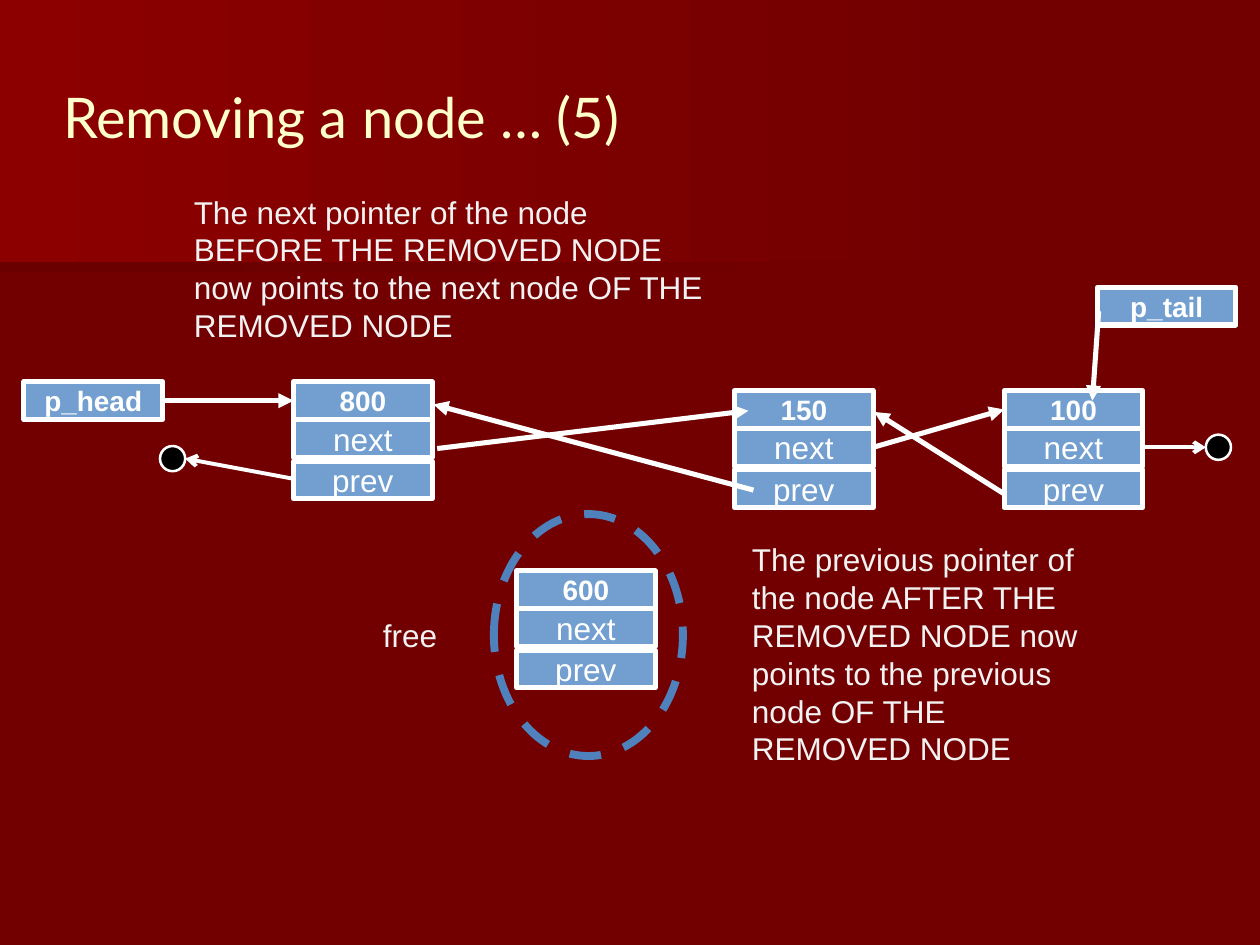
from dataclasses import dataclass

from lxml import etree
from pptx import Presentation
from pptx.dml.color import RGBColor
from pptx.enum.dml import MSO_LINE
from pptx.enum.shapes import MSO_CONNECTOR, MSO_SHAPE
from pptx.enum.text import MSO_ANCHOR, MSO_AUTO_SIZE, PP_ALIGN
from pptx.oxml.ns import qn
from pptx.util import Emu, Pt

RECTANGLE, OVAL = MSO_SHAPE.RECTANGLE, MSO_SHAPE.OVAL
STRAIGHT, DASH = MSO_CONNECTOR.STRAIGHT, MSO_LINE.DASH
MIDDLE, LEFT, CENTER = MSO_ANCHOR.MIDDLE, PP_ALIGN.LEFT, PP_ALIGN.CENTER
FIT_SHAPE = MSO_AUTO_SIZE.SHAPE_TO_FIT_TEXT

EMU_PER_PX = 9144
CELL_WIDTH, CELL_HEIGHT = 110, 30
ROW_OFFSETS = {"next": 30, "prev": 63}
DOT_SIZE = 20


@dataclass(frozen=True)
class Theme:
    """Colours, fonts and sizes of the slide."""

    background: str = "720000"
    band_low: str = "6B0000"
    band_high: str = "8C0000"
    title: str = "FFFFCC"
    note: str = "F2F2F2"
    cell: str = "729FCF"
    line: str = "FFFFFF"
    dot: str = "000000"
    ring: str = "4F81BD"
    title_font: str = "Lato"
    body_font: str = "Arial"
    title_size: float = 32
    body_size: float = 18
    key_size: float = 16
    line_width: float = 2.89
    null_width: float = 2.25
    dot_width: float = 1.45
    ring_width: float = 4.5


THEME = Theme()


def px(*lengths):
    """Turn px lengths into EMU."""
    return [Emu(length * EMU_PER_PX) for length in lengths]


def apply(target, values):
    """Set each attribute named in values."""
    for name, value in values.items():
        setattr(target, name, value)


def write(frame, text, color, font, frame_format, align=LEFT):
    """Write one formatted paragraph into a text frame."""
    apply(frame, frame_format)
    para = frame.paragraphs[0]
    para.alignment = align
    span = para.add_run()
    span.text = text
    apply(span.font, font)
    span.font.color.rgb = RGBColor.from_string(color)


def add_shape(page, kind, box, fill=None, line=None, width=0):
    """Add a flat shape with an optional fill and line."""
    shape = page.shapes.add_shape(kind, *px(*box))
    shape.shadow.inherit = False
    if fill:
        shape.fill.solid()
        shape.fill.fore_color.rgb = RGBColor.from_string(fill)
    else:
        shape.fill.background()
    if line:
        shape.line.color.rgb = RGBColor.from_string(line)
        shape.line.width = Pt(width)
    else:
        shape.line.fill.background()
    return shape


def add_band(page, box, color):
    """Add a band that fades into the background."""
    fill = add_shape(page, RECTANGLE, box).fill
    fill.gradient()
    fill.gradient_angle = 0
    for stop, position, shade in zip(fill.gradient_stops, (0, 1), (color, THEME.background)):
        stop.position = position
        stop.color.rgb = RGBColor.from_string(shade)


def add_title(page, box, text):
    """Place the title above the bands."""
    title = page.shapes.title
    page.shapes._spTree.append(title._element)
    apply(title, dict(zip(("left", "top", "width", "height"), px(*box))))
    margins = dict.fromkeys(("margin_left", "margin_top", "margin_right", "margin_bottom"), 0)
    font = {"name": THEME.title_font, "size": Pt(THEME.title_size)}
    write(title.text_frame, text, THEME.title, font, {**margins, "vertical_anchor": MIDDLE})


def add_cell(page, left, top, text, is_key=False):
    """Add one labelled memory cell."""
    box = (left, top, CELL_WIDTH, CELL_HEIGHT)
    cell = add_shape(page, RECTANGLE, box, THEME.cell, THEME.line, THEME.line_width)
    side, edge = px(12, 7)
    frame_format = {"margin_left": side, "margin_right": side, "margin_top": edge,
                    "margin_bottom": edge, "word_wrap": False, "vertical_anchor": MIDDLE}
    size = THEME.key_size if is_key else THEME.body_size
    font = {"name": THEME.body_font, "size": Pt(size), "bold": is_key}
    write(cell.text_frame, text, THEME.line, font, frame_format, CENTER)


def add_node(page, left, top, key):
    """Add a list node: its key above its two pointers."""
    add_cell(page, left, top, key, is_key=True)
    for label, offset in ROW_OFFSETS.items():
        add_cell(page, left, top + offset, label)


def add_arrow(page, start, end, head="triangle", width=THEME.line_width):
    """Add a straight arrow from start to end."""
    arrow = page.shapes.add_connector(STRAIGHT, *px(*start, *end))
    arrow.line.color.rgb = RGBColor.from_string(THEME.line)
    arrow.line.width = Pt(width)
    etree.SubElement(arrow.line._get_or_add_ln(), qn("a:tailEnd"), type=head)
    etree.SubElement(arrow._element.spPr, qn("a:effectLst"))


def add_null(page, left, top, start, end):
    """Add a null dot and the pointer that ends there."""
    add_shape(page, OVAL, (left, top, DOT_SIZE, DOT_SIZE), THEME.dot, THEME.line, THEME.dot_width)
    add_arrow(page, start, end, "arrow", THEME.null_width)


def add_note(page, box, text):
    """Add a wrapped text note."""
    frame = page.shapes.add_textbox(*px(*box)).text_frame
    font = {"name": THEME.body_font, "size": Pt(THEME.body_size)}
    write(frame, text, THEME.note, font, {"word_wrap": True, "auto_size": FIT_SHAPE})


def add_list(page):
    """Draw the linked list, its end pointers and the freed node."""
    ring = add_shape(page, OVAL, (392, 408, 150, 192), None, THEME.ring, THEME.ring_width)
    ring.line.dash_style = DASH
    for left, top, key in ((233, 303, "800"), (583, 310, "150"), (797, 310, "100"), (410, 453, "600")):
        add_node(page, left, top, key)
    for left, top, name in ((19, 303, "p_head"), (871, 228, "p_tail")):
        add_cell(page, left, top, name, is_key=True)
    add_null(page, 957, 345, (907, 355), (957, 355))
    add_null(page, 127, 354, (233, 380), (147, 364))
    for start, end in (
        ((129, 318), (233, 318)),
        ((693, 355), (797, 325)),
        ((797, 392), (694, 327)),
        ((347, 356), (594, 326)),
        ((598, 389), (344, 321)),
        ((872, 247), (867, 318)),
    ):
        add_arrow(page, start, end)


def main():
    """Build and save the slide."""
    deck = Presentation()
    deck.slide_width, deck.slide_height = px(1000, 750)
    page = deck.slides.add_slide(deck.slide_layouts[5])
    page.background.fill.solid()
    page.background.fill.fore_color.rgb = RGBColor.from_string(THEME.background)
    add_band(page, (0, 101, 779, 115), THEME.band_low)
    add_band(page, (0, 0, 792, 208), THEME.band_high)
    add_title(page, (50, 30, 900, 125), "Removing a node … (5)")
    add_list(page)
    add_note(page, (294, 484, 101, 40), "free")
    add_note(page, (587, 424, 283, 192), "The previous pointer of the node AFTER THE REMOVED NODE "
             "now points to the previous node OF THE REMOVED NODE")
    add_note(page, (144, 148, 433, 131), "The next pointer of the node BEFORE THE REMOVED NODE "
             "now points to the next node OF THE REMOVED NODE")
    deck.save("out.pptx")


if __name__ == "__main__":
    main()
